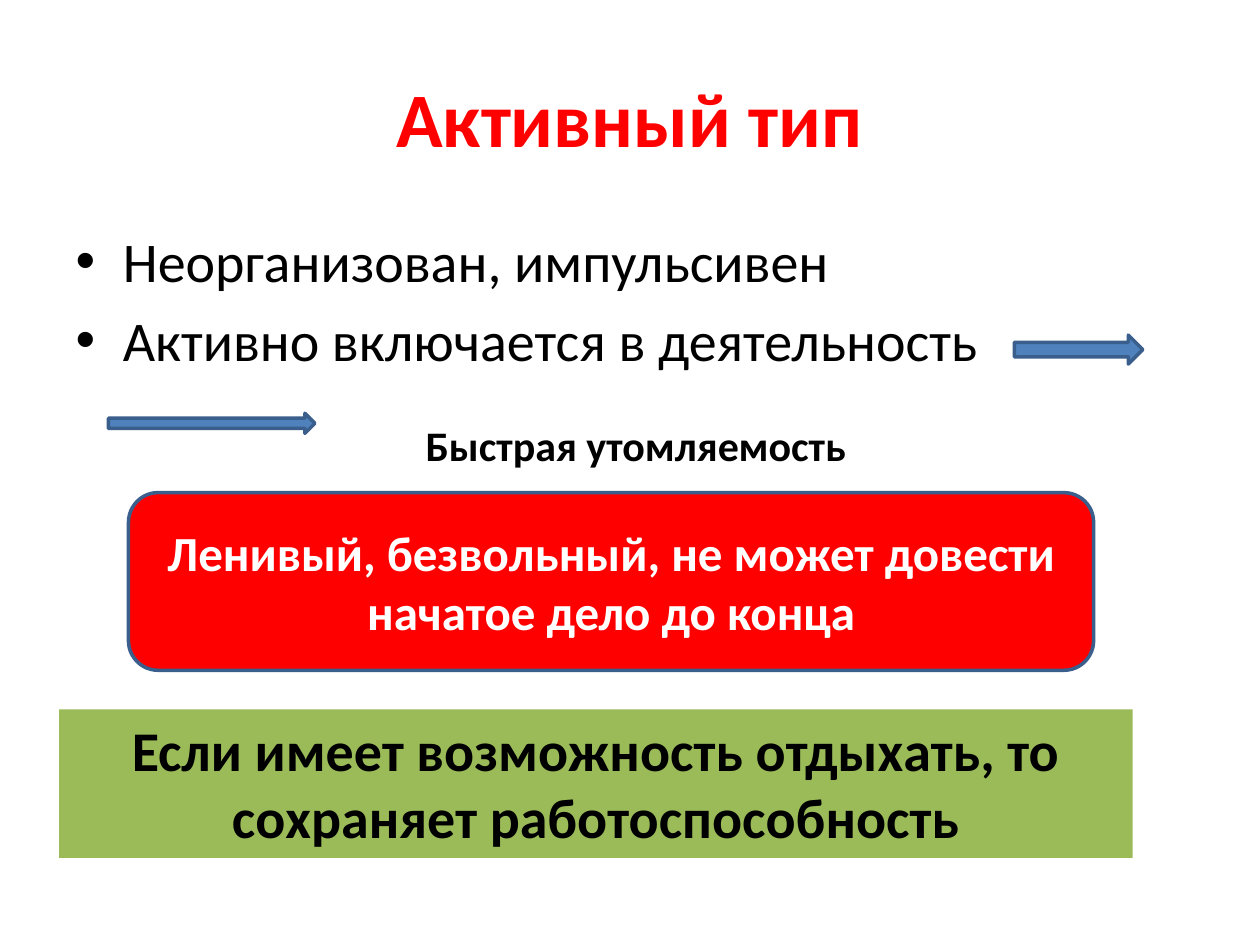
from pptx import Presentation
from pptx.dml.color import RGBColor
from pptx.enum.shapes import MSO_SHAPE
from pptx.enum.text import MSO_ANCHOR, PP_ALIGN
from pptx.util import Inches, Pt

RED = RGBColor(0xFF, 0x00, 0x00)
GREEN = RGBColor(0x9B, 0xBB, 0x59)
BLUE = RGBColor(0x4F, 0x81, 0xBD)
NAVY = RGBColor(0x3A, 0x5F, 0x8C)
BLACK = RGBColor(0x00, 0x00, 0x00)
WHITE = RGBColor(0xFF, 0xFF, 0xFF)


def place(sp, box):
    """Move and size a placeholder."""
    sp.left, sp.top, sp.width, sp.height = map(Inches, box)


def write(tf, lines, size, color, bold=False, align=None):
    """Fill a text frame with one paragraph per line."""
    tf.word_wrap = True
    for i, line in enumerate(lines):
        p = tf.paragraphs[0] if i == 0 else tf.add_paragraph()
        p.text = line
        p.alignment = align
        p.font.name = "Calibri"
        p.font.size = Pt(size)
        p.font.bold = bold
        p.font.color.rgb = color


def add_shape(s, kind, box, fill, line=None):
    """Add a flat preset shape with an optional outline."""
    sp = s.shapes.add_shape(kind, *map(Inches, box))
    sp.shadow.inherit = False
    sp.fill.solid()
    sp.fill.fore_color.rgb = fill
    if line is None:
        sp.line.fill.background()
    else:
        sp.line.color.rgb = line
        sp.line.width = Pt(2)
    return sp


def add_panel(s, kind, box, fill, text, size, color, line=None,
              anchor=MSO_ANCHOR.MIDDLE):
    """Add a filled shape with a bold centred statement."""
    tf = add_shape(s, kind, box, fill, line).text_frame
    tf.vertical_anchor = anchor
    write(tf, [text], size, color, True, PP_ALIGN.CENTER)


def main():
    """Build the slide about the active type."""
    prs = Presentation()
    prs.slide_width, prs.slide_height = Inches(10), Inches(7.5)
    s = prs.slides.add_slide(prs.slide_layouts[1])

    title, body = s.placeholders
    place(title, (0.5, 0.3, 9, 1.25))
    write(title.text_frame, ["Активный тип"], 44, RED, True, PP_ALIGN.CENTER)
    place(body, (0.5, 1.75, 9, 4.95))
    write(body.text_frame,
          ["Неорганизован, импульсивен", "Активно включается в деятельность"],
          32, BLACK)

    for box in ((8.05, 2.66, 1.02, 0.23), (0.86, 3.28, 1.64, 0.16)):
        add_shape(s, MSO_SHAPE.RIGHT_ARROW, box, BLUE, NAVY)

    label = s.shapes.add_textbox(*map(Inches, (3.28, 3.28, 3.75, 0.5)))
    write(label.text_frame, ["Быстрая утомляемость"], 24, BLACK, True)

    add_panel(s, MSO_SHAPE.ROUNDED_RECTANGLE, (1.02, 3.91, 7.66, 1.41), RED,
              "Ленивый, безвольный, не может довести начатое дело до конца",
              28, WHITE, NAVY)
    add_panel(s, MSO_SHAPE.RECTANGLE, (0.47, 5.63, 8.52, 1.18), GREEN,
              "Если имеет возможность отдыхать, то сохраняет работоспособность",
              32, BLACK, anchor=MSO_ANCHOR.TOP)
    prs.save("out.pptx")


if __name__ == "__main__":
    main()
